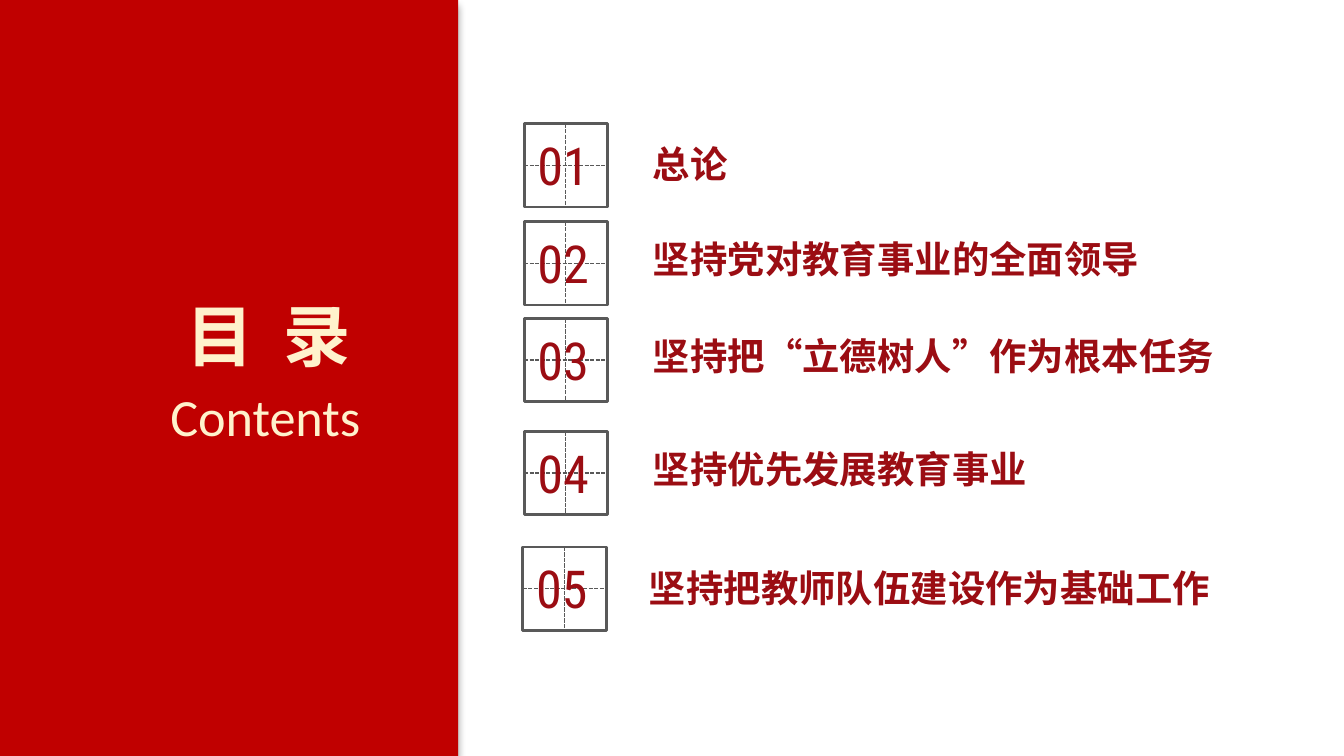
from lxml import etree
from pptx import Presentation
from pptx.dml.color import RGBColor
from pptx.enum.dml import MSO_LINE
from pptx.enum.shapes import MSO_CONNECTOR, MSO_SHAPE
from pptx.enum.text import MSO_ANCHOR, PP_ALIGN
from pptx.oxml import parse_xml
from pptx.oxml.ns import nsdecls, qn
from pptx.util import Inches, Pt

COLORS = {
    "red": "C00000",
    "cream": "FFF2CC",
    "white": "FFFFFF",
    "gray": "595959",
    "crimson": "9B0D13",
    "black": "000000",
}
CJK_FONT = "Noto Sans CJK SC"
SLIDE_WIDTH = 10
SLIDE_HEIGHT = SLIDE_WIDTH * 9 / 16
CELL = 0.62
ENTRIES = [
    ("总论", 3.9, 0.92, 0.86, 0.08, 4.41),
    ("坚持党对教育事业的全面领导", 3.9, 1.65, 0.86, 0.06, 4.41),
    ("坚持把“立德树人”作为根本任务", 3.9, 2.37, 0.86, 0.06, 4.41),
    ("坚持优先发展教育事业", 3.9, 3.21, 0.86, 0.06, 4.41),
    ("坚持把教师队伍建设作为基础工作", 3.89, 4.07, 0.84, 0.09, 4.68),
]


def color(name):
    return RGBColor.from_string(COLORS[name])


def add_text(shapes, box, words, size, font, tint, bold=False,
             align=PP_ALIGN.LEFT, anchor=MSO_ANCHOR.TOP):
    label = shapes.add_textbox(*map(Inches, box))
    frame = label.text_frame
    frame.word_wrap = True
    frame.vertical_anchor = anchor
    frame.text = words
    paragraph = frame.paragraphs[0]
    paragraph.alignment = align
    run = paragraph.runs[0]
    run.font.size = Pt(size)
    run.font.name = font
    run.font.bold = bold
    run.font.color.rgb = color(tint)
    properties = run.font._element
    etree.SubElement(properties, qn("a:ea")).set("typeface", CJK_FONT)
    return run


def add_panel(shapes, box, tint):
    panel = shapes.add_shape(MSO_SHAPE.RECTANGLE, *map(Inches, box))
    panel.shadow.inherit = False
    panel.fill.solid()
    panel.fill.fore_color.rgb = color(tint)
    panel.line.fill.background()
    return panel


def add_background(shapes, left, top, width, height):
    backdrop = add_panel(shapes, (left, top, width, height), "white")
    tint = backdrop._element.spPr.find(qn("a:solidFill"))[0]
    etree.SubElement(tint, qn("a:alpha")).set("val", "65000")


def add_sidebar(shapes, left, top, width, height):
    sidebar = add_panel(shapes, (left, top, width, height), "red")
    effects = sidebar._element.spPr.find(qn("a:effectLst"))
    effects.append(parse_xml(
        f'<a:outerShdw {nsdecls("a")} blurRad="{Pt(4)}" dist="{Pt(3)}" '
        f'dir="5400000" algn="t" rotWithShape="0">'
        f'<a:srgbClr val="{COLORS["black"]}"><a:alpha val="40000"/></a:srgbClr>'
        f'</a:outerShdw>'))
    add_text(shapes, (left + 0.98, top + 2.81, 2.03, 0.57), "Contents",
             28, "Calibri", "cream", align=PP_ALIGN.CENTER)
    heading = add_text(shapes, (left + 1.22, top + 2.14, 1.6, 0.71), "目 录",
                       36, CJK_FONT, "cream", True, PP_ALIGN.CENTER)
    heading.font._element.set("spc", "400")


def add_guide(shapes, start, end):
    guide = shapes.add_connector(MSO_CONNECTOR.STRAIGHT,
                                 *map(Inches, (*start, *end)))
    guide.line.color.rgb = color("gray")
    guide.line.width = Pt(0.75)
    guide.line.dash_style = MSO_LINE.SQUARE_DOT
    etree.SubElement(guide._element.spPr, qn("a:effectLst"))


def add_entry(shapes, number, topic, left, top, indent, drop, width):
    entry = shapes.add_group_shape().shapes
    square = entry.add_shape(MSO_SHAPE.RECTANGLE,
                             *map(Inches, (left, top, CELL, CELL)))
    square.shadow.inherit = False
    square.fill.background()
    square.line.color.rgb = color("gray")
    square.line.width = Pt(1.5)
    middle = CELL / 2
    add_guide(entry, (left, top + middle), (left + CELL, top + middle))
    add_guide(entry, (left + middle, top), (left + middle, top + CELL))
    add_text(entry, (left, top + 0.02, 0.63, 0.57), f"{number:02}",
             28, "Roboto Condensed", "crimson", anchor=MSO_ANCHOR.MIDDLE)
    add_text(entry, (left + indent, top + drop, width, 0.44), topic,
             20, "Calibri", "crimson", True)


def main():
    deck = Presentation()
    deck.slide_width = Inches(SLIDE_WIDTH)
    deck.slide_height = Inches(SLIDE_HEIGHT)
    shapes = deck.slides.add_slide(deck.slide_layouts[6]).shapes
    add_background(shapes, 3.43, 0, 6.57, SLIDE_HEIGHT)
    add_sidebar(shapes, -0.02, 0, 3.43, SLIDE_HEIGHT)
    for number, entry in enumerate(ENTRIES, 1):
        add_entry(shapes, number, *entry)
    deck.save("out.pptx")


if __name__ == "__main__":
    main()
